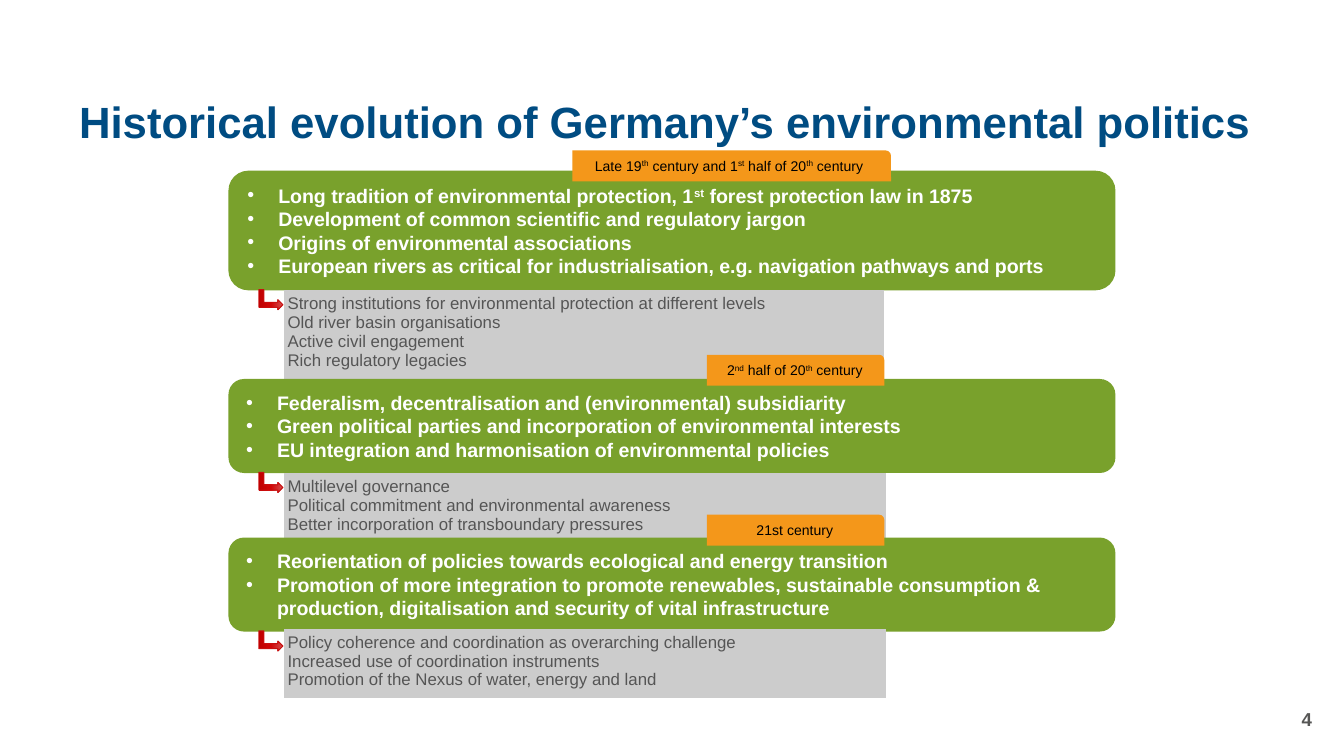
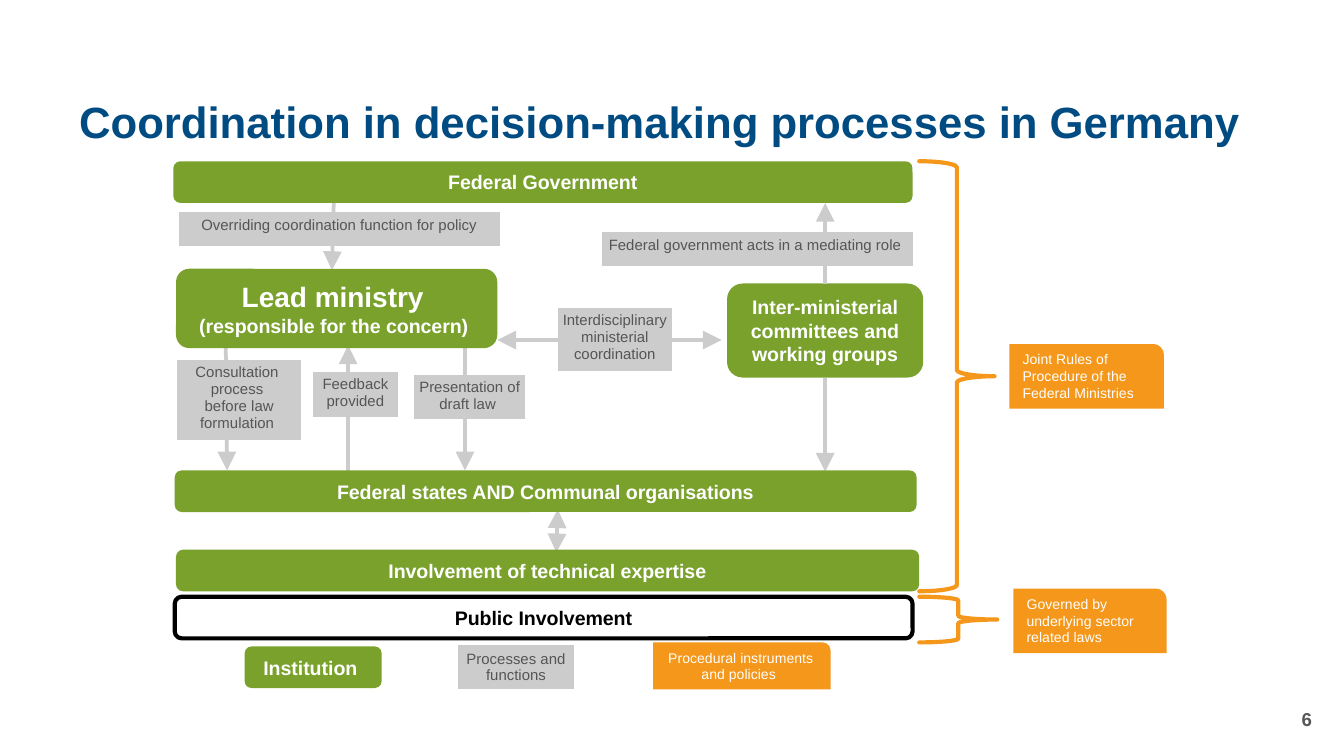
from lxml import etree
from pptx import Presentation, util as u
from pptx.dml.color import RGBColor
from pptx.enum import shapes, text
from pptx.oxml import parse_xml
from pptx.oxml.ns import nsdecls, qn

GREEN, GREY, ORANGE, NAVY = "79A12C", "CCCCCC", "F4971A", "004C82"
WHITE, BLACK, RED = "FFFFFF", "000000", "C80F0F"
PLAIN_TABLE = "{2D5ABB26-0587-4C30-8999-92F81FD0307C}"
SHAPE, ALIGN, ANCHOR = shapes.MSO_SHAPE, text.PP_ALIGN, text.MSO_ANCHOR

STYLES = {
    "title": dict(size=23.4, bold=True, color=NAVY),
    "number": dict(size=10, bold=True, color="575756"),
    "box": dict(size=10.5, bold=True, color=WHITE),
    "outline": dict(size=10.5, bold=True, color=BLACK),
    "tag": dict(size=7.5, bold=False, color=BLACK),
    "instrument": dict(size=7.5, bold=False, color=WHITE),
    "note": dict(size=9, bold=False, color="555555"),
    "process": dict(size=8, bold=False, color="555555"),
}


def rgb(hex_value):
    """Turn a hex string into a colour."""
    return RGBColor.from_string(hex_value)


def inches(box):
    """Turn a sequence of numbers into lengths."""
    return [u.Inches(v) for v in box]


def add_bullet(p):
    """Give a paragraph a hanging round bullet."""
    pPr = p._p.get_or_add_pPr()
    pPr.set("marL", str(u.Inches(0.23)))
    pPr.set("indent", str(-u.Inches(0.23)))
    etree.SubElement(pPr, qn("a:buFont")).set("typeface", "Arial")
    etree.SubElement(pPr, qn("a:buChar")).set("char", "•")


def write(tf, lines, style, align=ALIGN.LEFT, bullet=False, sizes=()):
    """Write one paragraph per line, raising the parts between carets."""
    look = STYLES[style]
    for i, line in enumerate(lines):
        p = tf.paragraphs[0] if i == 0 else tf.add_paragraph()
        p.alignment = align
        if bullet:
            add_bullet(p)
        size = sizes[i] if sizes else look["size"]
        for j, part in enumerate(line.split("^")):
            if not part:
                continue
            r = p.add_run()
            r.text = part
            values = dict(name="Arial", size=u.Pt(size), bold=look["bold"])
            for key, value in values.items():
                setattr(r.font, key, value)
            r.font.color.rgb = rgb(look["color"])
            if j % 2:
                r._r.get_or_add_rPr().set("baseline", "30000")


def add_label(s, box, line, style, align=ALIGN.LEFT):
    """Add a middle-anchored text box and return its paragraph."""
    tf = s.shapes.add_textbox(*inches(box)).text_frame
    tf.word_wrap = True
    tf.vertical_anchor = ANCHOR.MIDDLE
    write(tf, [line], style, align)
    return tf.paragraphs[0]


def add_shape(s, kind, box, fill=None, line=None, width=2.25):
    """Add a flat preset shape with an optional fill and outline."""
    sp = s.shapes.add_shape(kind, *inches(box))
    sp.shadow.inherit = False
    if fill:
        sp.fill.solid()
        sp.fill.fore_color.rgb = rgb(fill)
    else:
        sp.fill.background()
    if line:
        sp.line.color.rgb = rgb(line)
        sp.line.width = u.Pt(width)
    else:
        sp.line.fill.background()
    return sp


def add_box(s, box, lines, style="box", fill=GREEN, line=None, align=ALIGN.CENTER, **kw):
    """Add a rounded box with middle-anchored bold text."""
    sp = add_shape(s, SHAPE.ROUNDED_RECTANGLE, box, fill, line)
    tf = sp.text_frame
    tf.word_wrap = True
    tf.vertical_anchor = ANCHOR.MIDDLE
    write(tf, lines, style, align, **kw)
    return sp


def add_tag(s, box, line, style, align=ALIGN.CENTER):
    """Add an orange tag with one rounded corner."""
    sp = add_shape(s, SHAPE.ROUND_1_RECTANGLE, box, ORANGE)
    tf = sp.text_frame
    tf.word_wrap = True
    tf.vertical_anchor = ANCHOR.TOP
    write(tf, [line], style, align)


def add_note(s, box, lines, style, align=ALIGN.CENTER, anchor=ANCHOR.TOP):
    """Add a one-cell grey table."""
    tbl = s.shapes.add_table(1, 1, *inches(box)).table
    tbl.first_row = tbl.horz_banding = False
    tbl._tbl.tblPr.find(qn("a:tableStyleId")).text = PLAIN_TABLE
    cell = tbl.cell(0, 0)
    for side in ("left", "top", "right", "bottom"):
        setattr(cell, f"margin_{side}", u.Inches(0.03))
    cell.vertical_anchor = anchor
    cell.fill.solid()
    cell.fill.fore_color.rgb = rgb(GREY)
    write(cell.text_frame, lines, style, align)


def add_arrow(s, start, end, ends, source=None, side=0):
    """Add a grey connector with large arrowheads at the named ends."""
    cx = s.shapes.add_connector(shapes.MSO_CONNECTOR.STRAIGHT, *inches(start + end))
    if source is not None:
        cx.begin_connect(source, side)
    cx.line.color.rgb = rgb(GREY)
    cx.line.width = u.Pt(2)
    ln = cx.line._get_or_add_ln()
    for name in ends:
        head = etree.SubElement(ln, qn(f"a:{name}End"))
        for key, value in dict(type="triangle", w="lg", len="lg").items():
            head.set(key, value)
    etree.SubElement(cx._element.spPr, qn("a:effectLst"))


def add_result_arrow(s, left, top):
    """Add the red bent arrow that leads to a result note."""
    sp = add_shape(s, SHAPE.BENT_UP_ARROW, (left, top, 0.15, 0.18), RED, RED, 0.5)
    sp.rotation = 90
    stops = "".join(
        f'<a:gs pos="{pos}000"><a:srgbClr val="{color}"/></a:gs>'
        for pos, color in ((0, "D24C4C"), (50, "D10606"), (100, "BF0000")))
    spPr = sp._element.spPr
    spPr.replace(spPr.find(qn("a:solidFill")), parse_xml(
        f'<a:gradFill {nsdecls("a")}><a:gsLst>{stops}</a:gsLst>'
        '<a:lin ang="5400000" scaled="0"/></a:gradFill>'))


def add_page(prs, title, number):
    """Add a slide with its title and page number."""
    s = prs.slides.add_slide(prs.slide_layouts[6])
    add_label(s, (0.49, 0.63, 9.37, 0.59), title, "title").line_spacing = 0.9
    add_label(s, (7.61, 5.2, 2.25, 0.3), number, "number", ALIGN.RIGHT)
    return s


def add_period(s, box, bullets, tag, tag_box, results, note_box):
    """Add one period: its box, results and date tag, offset from the box."""
    left, top, _, height = box
    bottom = top + height
    add_box(s, box, bullets, align=ALIGN.LEFT, bullet=True)
    dx, dy, w, h = note_box
    add_note(s, (left + dx, bottom + dy, w, h), results, "note", ALIGN.LEFT)
    dx, dy, w, h = tag_box
    add_tag(s, (left + dx, top + dy, w, h), tag, "tag")
    add_result_arrow(s, left + 0.24, bottom - 0.02)


def history_slide(prs):
    """Build the three periods of environmental politics."""
    s = add_page(prs, "Historical evolution of Germany’s environmental politics", "4")
    add_period(
        s, (1.7, 1.27, 6.6, 0.89),
        ["Long tradition of environmental protection, 1^st^ forest protection law in 1875",
         "Development of common scientific and regulatory jargon",
         "Origins of environmental associations",
         "European rivers as critical for industrialisation, e.g. navigation pathways and ports"],
        "Late 19^th^ century and 1^st^ half of 20^th^ century ", (2.56, -0.15, 2.37, 0.23),
        ["Strong institutions for environmental protection at different levels",
         "Old river basin organisations", "Active civil engagement",
         "Rich regulatory legacies"], (0.41, 0, 4.47, 0.66))
    add_period(
        s, (1.7, 2.82, 6.6, 0.7),
        ["Federalism, decentralisation and (environmental) subsidiarity",
         "Green political parties and incorporation of environmental interests",
         "EU integration and harmonisation of environmental policies"],
        "2^nd^ half of 20^th^ century", (3.56, -0.18, 1.32, 0.23),
        ["Multilevel governance", "Political commitment and environmental awareness",
         "Better incorporation of transboundary pressures"], (0.41, 0, 4.48, 0.51))
    add_period(
        s, (1.7, 4, 6.6, 0.7),
        ["Reorientation of policies towards ecological and energy transition",
         "Promotion of more integration to promote renewables, sustainable consumption & "
         "production, digitalisation and security of vital infrastructure"],
        "21st century", (3.56, -0.17, 1.32, 0.23),
        ["Policy coherence and coordination as overarching challenge",
         "Increased use of coordination instruments",
         "Promotion of the Nexus of water, energy and land"], (0.41, -0.02, 4.48, 0.51))


def add_institutions(s):
    """Add the institutions and the arrows that run between them."""
    committees = add_box(s, (5.41, 2.11, 1.46, 0.7),
                         ["Inter-ministerial committees and working groups"])
    add_arrow(s, (6.14, 2.11), (6.14, 1.51), ["tail"], committees, 0)
    add_arrow(s, (6.14, 2.81), (6.14, 3.51), ["tail"], committees, 2)
    for start, end, ends in (
            ((3.7, 2.53), (5.37, 2.53), ["head", "tail"]),
            ((3.46, 2.54), (3.46, 3.5), ["tail"]),
            ((2.59, 2.57), (2.59, 3.51), ["head"]),
            ((1.68, 2.58), (1.69, 3.5), ["tail"]),
            ((2.49, 1.26), (2.47, 2.01), ["tail"]),
            ((4.15, 3.79), (4.14, 4.11), ["head", "tail"])):
        add_arrow(s, start, end, ends)
    add_box(s, (1.31, 2, 2.39, 0.59),
            ["Lead ministry ", "(responsible for the concern) "], sizes=(15, 10.5))
    for left, top, width, name in (
            (1.29, 1.2, 5.5, "Federal Government"),
            (1.3, 3.5, 5.52, "Federal states AND Communal organisations"),
            (1.31, 4.09, 5.53, "Involvement of technical expertise")):
        add_box(s, (left, top, width, 0.31), [name])
    add_box(s, (1.3, 4.44, 5.49, 0.31), ["Public Involvement"], "outline", None, BLACK)


def add_processes(s):
    """Add the grey process notes over the arrows."""
    for box, lines in (
            ((1.33, 1.58, 2.39, 0.25), ["Overriding coordination function for policy"]),
            ((4.48, 1.73, 2.31, 0.25), ["Federal government acts in a mediating role "]),
            ((4.15, 2.29, 0.85, 0.47), ["Interdisciplinary ministerial coordination"]),
            ((1.32, 2.68, 0.92, 0.59),
             ["Consultation ", "process ", "before law formulation "]),
            ((2.33, 2.77, 0.63, 0.33), ["Feedback provided"]),
            ((3.08, 2.79, 0.83, 0.33), ["Presentation of draft law "])):
        add_note(s, box, lines, "process")


def add_rules(s):
    """Add the braces and the rules that govern each group."""
    for brace, tag, line in (
            ((6.84, 1.2, 0.56, 3.2), (7.51, 2.56, 1.15, 0.48),
             "Joint Rules of Procedure of the Federal Ministries"),
            ((6.84, 4.44, 0.58, 0.34), (7.54, 4.38, 1.14, 0.48),
             "Governed by underlying sector related laws")):
        sp = add_shape(s, SHAPE.RIGHT_BRACE, brace, line=ORANGE)
        sp.line._get_or_add_ln().set("cap", "rnd")
        add_tag(s, tag, line, "instrument", ALIGN.LEFT)


def add_legend(s, left, top):
    """Add the key to the three kinds of element."""
    add_box(s, (left, top + 0.03, 1.02, 0.31), ["Institution "])
    add_note(s, (left + 1.59, top + 0.02, 0.86, 0.33), ["Processes and functions"],
             "process", anchor=ANCHOR.MIDDLE)
    add_tag(s, (left + 3.04, top, 1.32, 0.35),
            "Procedural instruments and policies ", "instrument")


def coordination_slide(prs):
    """Build the diagram of decision-making processes."""
    s = add_page(prs, "Coordination in decision-making processes in Germany", "6")
    add_institutions(s)
    add_processes(s)
    add_rules(s)
    add_legend(s, 1.82, 4.78)


def main():
    """Build and save the presentation."""
    prs = Presentation()
    prs.slide_width = u.Inches(10)
    prs.slide_height = prs.slide_width * 9 // 16
    history_slide(prs)
    coordination_slide(prs)
    prs.save("out.pptx")


if __name__ == "__main__":
    main()
